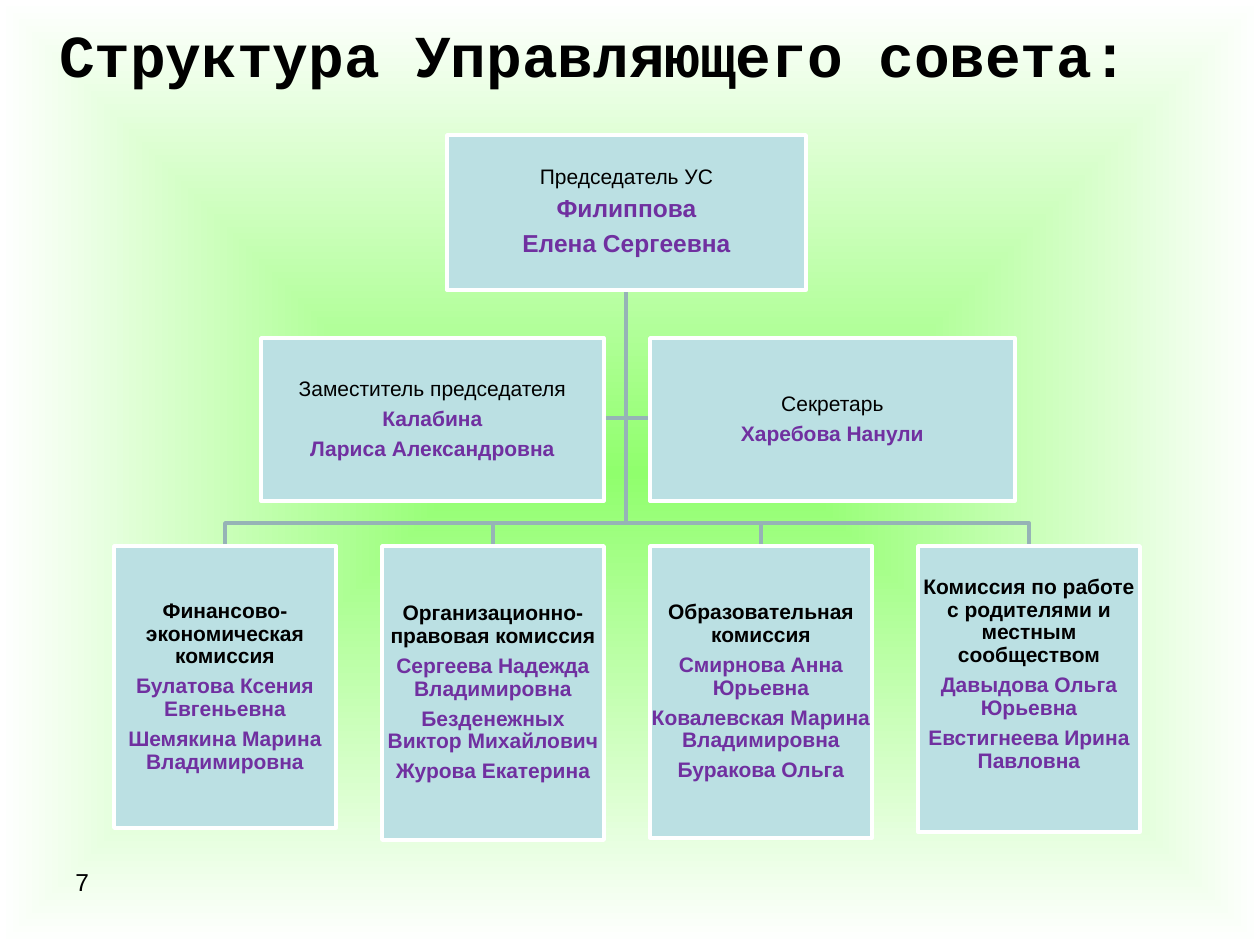
from lxml.etree import SubElement
from pptx import Presentation
from pptx.dml.color import RGBColor
from pptx.enum.shapes import MSO_SHAPE
from pptx.enum.text import MSO_ANCHOR, MSO_AUTO_SIZE, PP_ALIGN
from pptx.oxml.ns import qn
from pptx.util import Pt

PX = 914400 / 126
COLORS = {"glow": "90FF6D", "edge": "FFFFFF", "box": "BBE0E3", "link": "96B3B6",
          "role": "000000", "person": "7030A0"}

TITLE = "Структура Управляющего совета:"
PAGE = "7"
CHAIR = ("Председатель УС", ["Филиппова", "Елена Сергеевна"])
DEPUTY = ("Заместитель председателя", ["Калабина", "Лариса Александровна"])
SECRETARY = ("Секретарь", ["Харебова Нанули"])
COMMISSIONS = [
    ("Финансово-экономическая комиссия",
     ["Булатова Ксения Евгеньевна", "Шемякина Марина Владимировна"], 282, 1),
    ("Организационно-правовая комиссия",
     ["Сергеева Надежда Владимировна", "Безденежных Виктор Михайлович",
      "Журова Екатерина"], 294, 1),
    ("Образовательная комиссия",
     ["Смирнова Анна Юрьевна", "Ковалевская Марина Владимировна",
      "Буракова Ольга"], 292, 1),
    ("Комиссия по работе с родителями и местным сообществом",
     ["Давыдова Ольга Юрьевна", "Евстигнеева Ирина Павловна"], 286, 30),
]

CHAIR_AREA = (447, 135, 359, 155)
DEPUTY_AREA = (261, 338, 343, 163)
SECRETARY_AREA = (650, 338, 365, 163)
COMMISSION_LEFT, COMMISSION_TOP, COMMISSION_WIDTH, COMMISSION_STEP = 114, 546, 222, 268
TRUNK_X, TRUNK_TOP, SIDE_Y, BAR_Y = 626, 291, 418, 523


def px(value):
    return round(value * PX)


def rgb(name):
    return RGBColor.from_string(COLORS[name])


def assign(target, **values):
    for key, value in values.items():
        setattr(target, key, value)


def place(shape, area):
    assign(shape, **dict(zip(("left", "top", "width", "height"), map(px, area))))


def style_font(font, size, color, bold=False, name="Arial"):
    assign(font, size=Pt(size), bold=bold, name=name)
    font.color.rgb = rgb(color)


def inset(frame, left, top, right, bottom):
    assign(frame, margin_left=px(left), margin_top=px(top),
           margin_right=px(right), margin_bottom=px(bottom),
           word_wrap=True, vertical_anchor=MSO_ANCHOR.MIDDLE)


def paint_background(slide):
    fill = slide.background.fill
    fill.gradient()
    for stop, name, position in zip(fill.gradient_stops, ("glow", "edge"), (0, 1)):
        stop.color.rgb = rgb(name)
        stop.position = position
    gradient = slide.element.find(".//" + qn("a:gradFill"))
    gradient.remove(gradient.find(qn("a:lin")))
    shade = SubElement(gradient, qn("a:path"), {"path": "shape"})
    SubElement(shade, qn("a:fillToRect"), {side: "50000" for side in "ltrb"})


def add_link(slide, points):
    start, *rest = points
    builder = slide.shapes.build_freeform(*start, scale=PX)
    builder.add_line_segments(rest, close=False)
    link = builder.convert_to_shape()
    link.shadow.inherit = False
    link.fill.background()
    link.line.color.rgb = rgb("link")
    link.line.width = Pt(2)


def add_box(slide, area, role, people, role_bold=False, person_size=12, bottom=1):
    box = slide.shapes.add_shape(MSO_SHAPE.RECTANGLE, *map(px, area))
    box.shadow.inherit = False
    box.fill.solid()
    box.fill.fore_color.rgb = rgb("box")
    box.line.color.rgb = rgb("edge")
    box.line.width = Pt(2)
    frame = box.text_frame
    inset(frame, 1, 1, 1, bottom)
    lines = [(role, 12, "role", role_bold)]
    lines += [(person, person_size, "person", True) for person in people]
    for index, (text, size, color, bold) in enumerate(lines):
        paragraph = frame.add_paragraph() if index else frame.paragraphs[0]
        paragraph.text = text
        assign(paragraph, alignment=PP_ALIGN.CENTER, line_spacing=0.9,
               space_after=Pt(0.35 * size))
        style_font(paragraph.font, size, color, bold)


def main():
    deck = Presentation()
    assign(deck, slide_width=px(1260), slide_height=px(945))
    slide = deck.slides.add_slide(deck.slide_layouts[5])
    paint_background(slide)

    title = slide.shapes.title
    place(title, (35, 37, 1162, 100))
    title.text_frame.text = TITLE
    title.text_frame.auto_size = MSO_AUTO_SIZE.NONE
    inset(title.text_frame, 0, 0, 44, 66)
    heading = title.text_frame.paragraphs[0]
    heading.alignment = PP_ALIGN.CENTER
    style_font(heading.font, 34, "role", True, "Courier New")

    page = slide.shapes.add_textbox(*map(px, (63, 861, 294, 65)))
    page.text_frame.word_wrap = True
    page.text_frame.text = PAGE
    style_font(page.text_frame.paragraphs[0].font, 14, "role")

    trunk = (TRUNK_X, TRUNK_TOP)
    for side_x in (SECRETARY_AREA[0], DEPUTY_AREA[0] + DEPUTY_AREA[2]):
        add_link(slide, [trunk, (TRUNK_X, SIDE_Y), (side_x, SIDE_Y)])
    lefts = [COMMISSION_LEFT + COMMISSION_STEP * i for i in range(len(COMMISSIONS))]
    for left in lefts:
        center = left + COMMISSION_WIDTH // 2
        add_link(slide, [trunk, (TRUNK_X, BAR_Y), (center, BAR_Y),
                         (center, COMMISSION_TOP)])

    add_box(slide, CHAIR_AREA, *CHAIR, person_size=14)
    for left, (role, people, height, bottom) in zip(lefts, COMMISSIONS):
        add_box(slide, (left, COMMISSION_TOP, COMMISSION_WIDTH, height),
                role, people, role_bold=True, bottom=bottom)
    add_box(slide, DEPUTY_AREA, *DEPUTY)
    add_box(slide, SECRETARY_AREA, *SECRETARY)

    deck.save("out.pptx")


if __name__ == "__main__":
    main()
